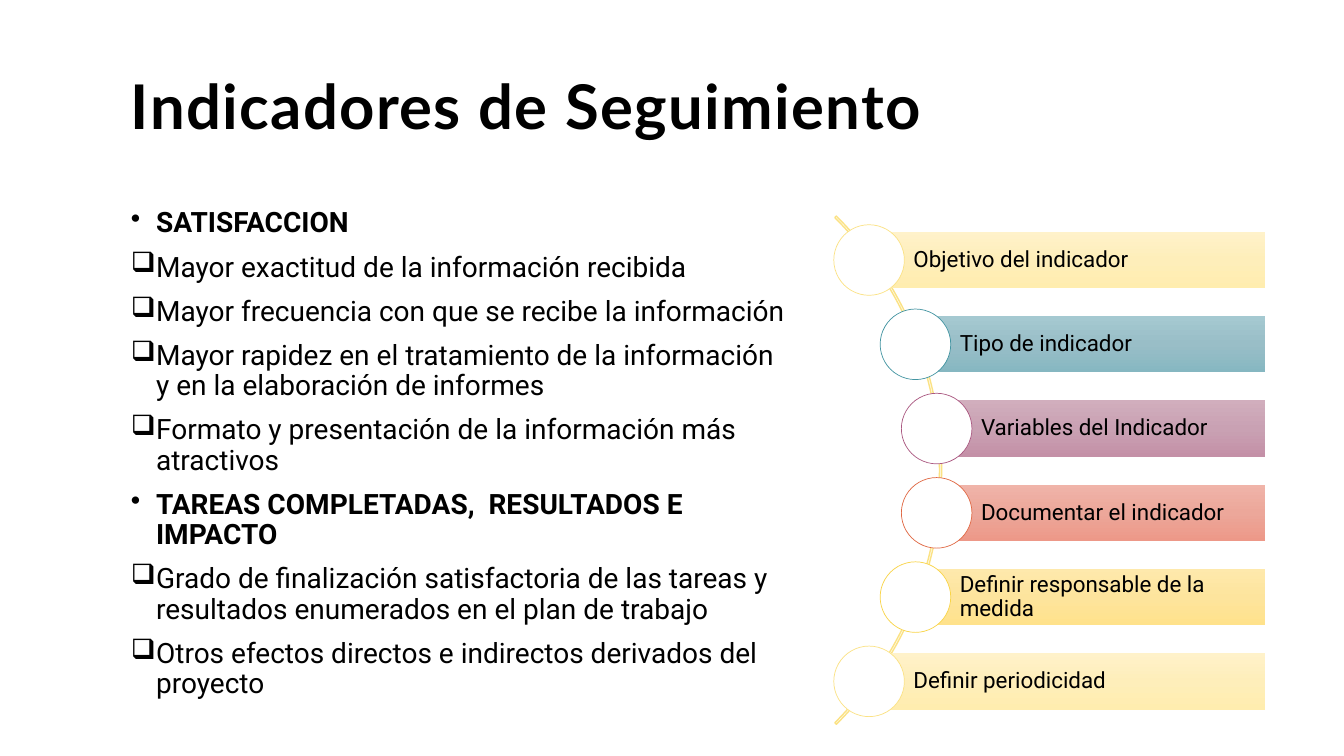
import copy

import lxml.etree
import pptx
import pptx.dml.color
import pptx.enum.shapes
import pptx.enum.text
import pptx.oxml.ns
import pptx.util

Inches = pptx.util.Inches
Pt = pptx.util.Pt
qn = pptx.oxml.ns.qn
SHAPE = pptx.enum.shapes.MSO_SHAPE
MIDDLE = pptx.enum.text.MSO_ANCHOR.MIDDLE
LEFT = pptx.enum.text.PP_ALIGN.LEFT


class Theme:
    head, body = "Lato", "Roboto"
    title, text, label = 44, 20, 16
    ink, paper, gold = "000000", "FFFFFF", "FBE284"
    # Bar gradient stops, then ring colour
    cream = ("FFF2CA", "FEEEBA", "FFEDAF", gold)
    teal = ("A5C9D1", "99BEC7", "86B7C1", "4495A2")
    plum = ("D1AEBD", "C9A1B3", "C490A7", "AA5881")
    coral = ("F0B4A9", "ECA79A", "ED9888", "E06742")
    amber = ("FEE9AC", "FDE49D", "FFE28B", "F9D448")


def color(code):
    return pptx.dml.color.RGBColor.from_string(code)


class Deck:
    def __init__(self, theme):
        self.theme = theme
        self.show = pptx.Presentation()
        self.show.slide_width = Inches(13.33)
        self.show.slide_height = Inches(7.5)
        self.slide = self.show.slides.add_slide(self.show.slide_layouts[6])

    def style(self, para, text, face, size, bold=False, lead=0.9):
        para.text = text
        para.alignment = LEFT
        para.line_spacing = lead
        font = para.font
        font.name, font.size, font.bold = face, Pt(size), bold
        font.color.rgb = color(self.theme.ink)

    def frame(self, *box):
        frame = self.slide.shapes.add_textbox(*map(Inches, box)).text_frame
        frame.word_wrap = True
        return frame

    def title(self, text, *box):
        frame = self.frame(*box)
        frame.vertical_anchor = MIDDLE
        para = frame.paragraphs[0]
        self.style(para, text, self.theme.head, self.theme.title, True, 0.8)
        para.runs[0].font._element.set("spc", "100")

    def list(self, items, *box):
        frame = self.frame(*box)
        for i, (text, bold) in enumerate(items):
            para = frame.add_paragraph() if i else frame.paragraphs[0]
            self.style(para, text, self.theme.body, self.theme.text, bold)
            para.space_before = Pt(10)
            props = para._p.get_or_add_pPr()
            props.set("marL", str(Inches(0.25)))
            props.set("indent", str(Inches(-0.31)))
            mark = lxml.etree.Element(qn("a:buChar"), char="•" if bold else "❑")
            # The bullet goes ahead of the default run properties
            props.find(qn("a:defRPr")).addprevious(mark)

    def shape(self, kind, box, line=None, width=0.5):
        shape = self.slide.shapes.add_shape(kind, *map(Inches, box))
        shape.shadow.inherit = False
        if line:
            shape.line.color.rgb = color(line)
            shape.line.width = Pt(width)
        else:
            shape.line.fill.background()
        return shape

    def arc(self, *box):
        arc = self.shape(SHAPE.BLOCK_ARC, box, self.theme.gold, 1)
        arc.fill.background()
        for i, value in enumerate((189, 27, 0.003)):
            arc.adjustments[i] = value

    def bar(self, text, stops, *box):
        bar = self.shape(SHAPE.RECTANGLE, box)
        bar.fill.gradient()
        bar.fill.gradient_angle = 270
        first = bar._element.spPr.find(".//" + qn("a:gs"))
        first.addnext(copy.deepcopy(first))
        for i, stop in enumerate(bar.fill.gradient_stops):
            stop.position = i / 2
            stop.color.rgb = color(stops[i])
        frame = bar.text_frame
        frame.word_wrap = True
        frame.vertical_anchor = MIDDLE
        frame.margin_left = Inches(0.44)
        frame.margin_right = frame.margin_top = frame.margin_bottom = Inches(0.04)
        self.style(frame.paragraphs[0], text, self.theme.body, self.theme.label)

    def ring(self, line, x, y, size):
        ring = self.shape(SHAPE.OVAL, (x, y, size, size), line)
        ring.fill.solid()
        ring.fill.fore_color.rgb = color(self.theme.paper)


def main():
    theme = Theme()
    deck = Deck(theme)

    # Title and list
    deck.title("Indicadores de Seguimiento", 1.2, 0.31, 11, 1.59)
    deck.list([
        ("SATISFACCION", True),
        ("Mayor exactitud de la información recibida", False),
        ("Mayor frecuencia con que se recibe la información", False),
        ("Mayor rapidez en el tratamiento de la información y en la "
         "elaboración de informes", False),
        ("Formato y presentación de la información más atractivos", False),
        ("TAREAS COMPLETADAS,  RESULTADOS E IMPACTO", True),
        ("Grado de finalización satisfactoria de las tareas y resultados "
         "enumerados en el plan de trabajo", False),
        ("Otros efectos directos e indirectos derivados del proyecto", False),
    ], 1.2, 2.02, 6.73, 4.9)

    # Steps along the arc: each ring is centred on the left end of its bar
    deck.arc(2.21, 1.1, 7.13, 7.13)
    steps = [
        ("Objetivo del indicador", 8.62, theme.cream),
        ("Tipo de indicador", 9.08, theme.teal),
        ("Variables del Indicador", 9.29, theme.plum),
        ("Documentar el indicador", 9.29, theme.coral),
        ("Definir responsable de la medida", 9.08, theme.amber),
        ("Definir periodicidad", 8.62, theme.cream),
    ]
    top, last, edge, high, size = 2.3, 6.48, 12.55, 0.56, 0.7
    pitch = (last - top) / (len(steps) - 1)
    for i, (text, x, tones) in enumerate(steps):
        y = top + i * pitch
        deck.bar(text, tones[:3], x, y, edge - x, high)
        deck.ring(tones[3], x - size / 2, y + (high - size) / 2, size)

    deck.show.save("out.pptx")


if __name__ == "__main__":
    main()
